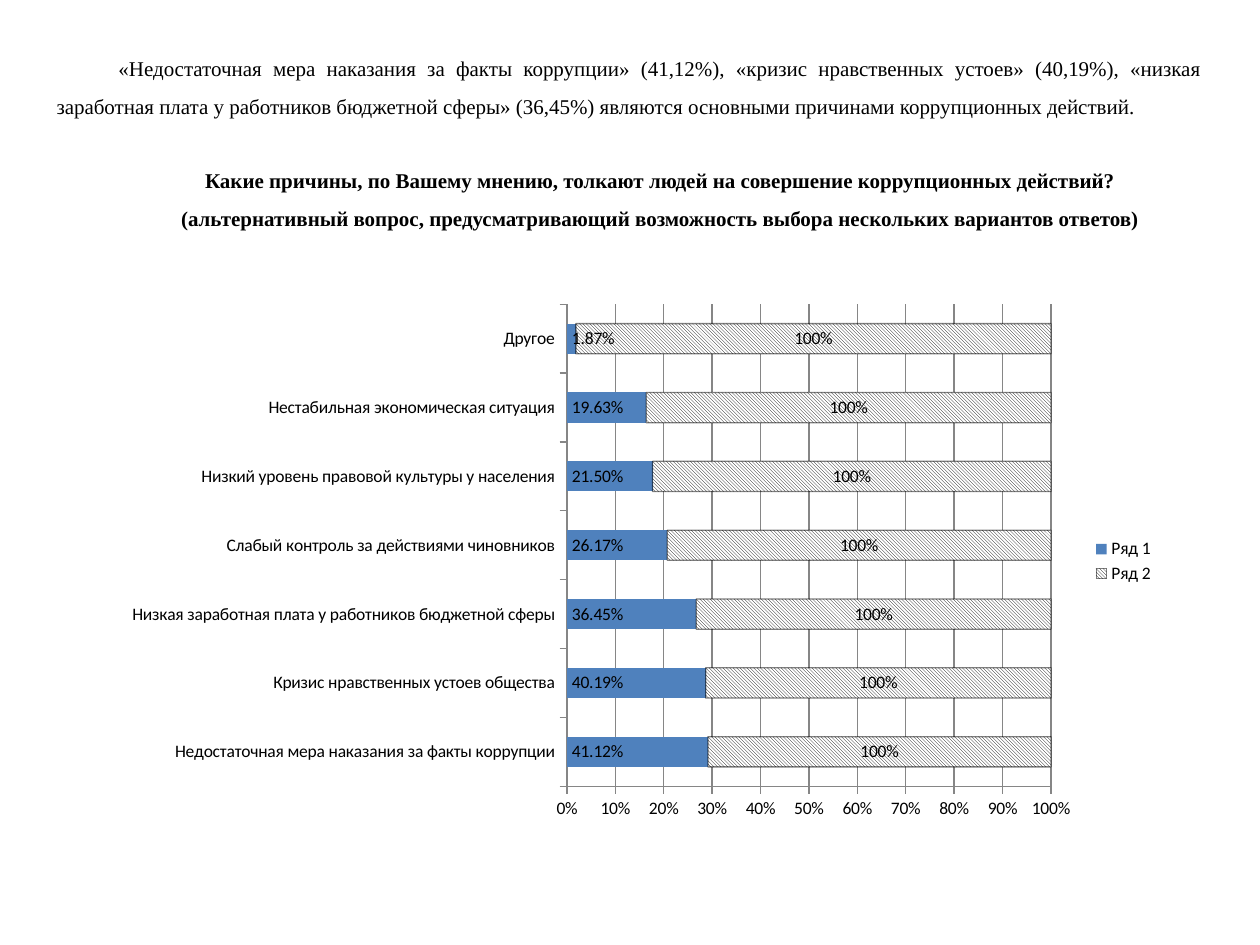
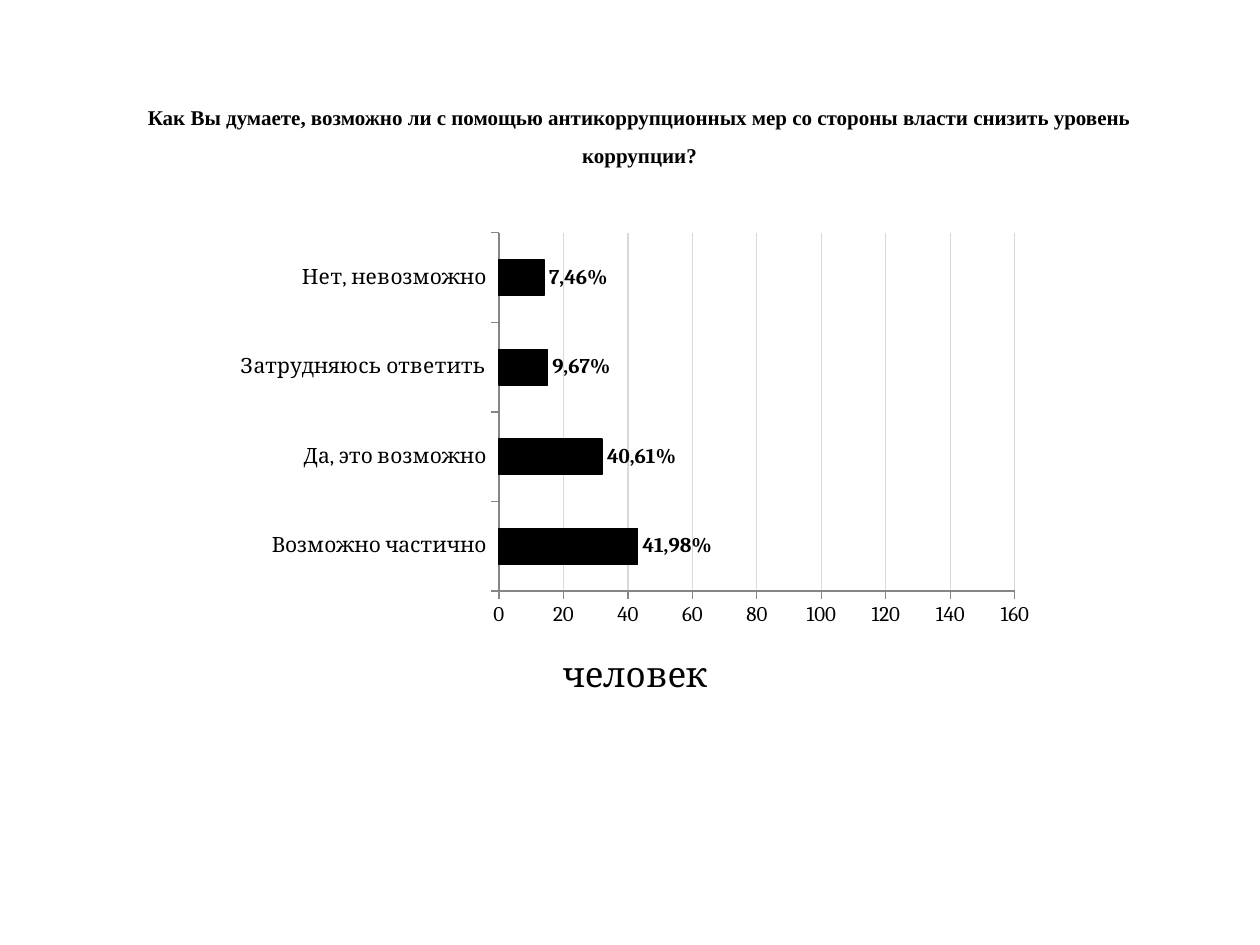
"""Build two survey slides, each with a heading and a bar chart."""
from lxml.etree import SubElement
from pptx import Presentation
from pptx.chart.data import CategoryChartData
from pptx.dml.color import RGBColor
from pptx.enum.chart import XL_CHART_TYPE as ChartType
from pptx.enum.chart import XL_LABEL_POSITION as LabelPlace
from pptx.enum.chart import XL_LEGEND_POSITION as LegendPlace
from pptx.enum.dml import MSO_PATTERN as Pattern
from pptx.enum.text import MSO_AUTO_SIZE as AutoSize
from pptx.enum.text import PP_ALIGN as Align
from pptx.oxml import parse_xml
from pptx.oxml.ns import nsdecls, qn
from pptx.util import Pt

COLORS = {"ink": "000000", "paper": "FFFFFF", "blue": "4F81BD",
          "axis": "868686", "grid": "D9D9D9"}
TEXT_FONT, CAUSES_FONT, OPINION_FONT = "Times New Roman", "Calibri", "Cambria"
TEXT_SIZE = 12
INDENT = 35.4

CAUSES_TEXT = [
    ("«Недостаточная мера наказания за факты коррупции» (41,12%), «кризис нравственных "
     "устоев» (40,19%), «низкая заработная плата у работников бюджетной сферы» (36,45%) "
     "являются основными причинами коррупционных действий.", Align.JUSTIFY, False, 0),
    ("Какие причины, по Вашему мнению, толкают людей на совершение коррупционных действий?",
     Align.CENTER, True, 21),
    ("(альтернативный вопрос, предусматривающий возможность выбора нескольких вариантов "
     "ответов)", Align.CENTER, True, 0),
]
CAUSES = [
    ("Недостаточная мера наказания за факты коррупции", 0.4112),
    ("Кризис нравственных устоев общества", 0.4019),
    ("Низкая заработная плата у работников бюджетной сферы", 0.3645),
    ("Слабый контроль за действиями чиновников", 0.2617),
    ("Низкий уровень правовой культуры у населения", 0.215),
    ("Нестабильная экономическая ситуация", 0.1963),
    ("Другое", 0.0187),
]
OPINION_TEXT = [
    ("Как Вы думаете, возможно ли с помощью антикоррупционных мер со стороны власти "
     "снизить уровень коррупции?", Align.CENTER, True, 0),
]
OPINIONS = [
    ("Возможно частично", 43, "41,98%"),
    ("Да, это возможно", 32, "40,61%"),
    ("Затрудняюсь ответить", 15, "9,67%"),
    ("Нет, невозможно", 14, "7,46%"),
]


def color(name):
    return RGBColor.from_string(COLORS[name])


def style_font(font, face, size, bold=False):
    font.name, font.size, font.bold = face, Pt(size), bold
    font.color.rgb = color("ink")


def style_line(line, name):
    line.color.rgb = color(name)
    line.width = Pt(0.75)


def add_text(page, place, paragraphs, indent=0):
    box = page.shapes.add_textbox(*map(Pt, place))
    frame = box.text_frame
    frame.word_wrap = True
    frame.auto_size = AutoSize.SHAPE_TO_FIT_TEXT
    for number, (text, align, bold, gap) in enumerate(paragraphs):
        para = frame.add_paragraph() if number else frame.paragraphs[0]
        para.text = text
        para.alignment, para.line_spacing = align, 1.5
        para.space_before = Pt(gap)
        para._p.get_or_add_pPr().set("indent", str(Pt(indent)))
        style_font(para.runs[0].font, TEXT_FONT, TEXT_SIZE, bold)


def set_layout(parent, inner=False, **parts):
    """Place a chart part by fractions of the chart's size."""
    layout = parent.find(qn("c:layout"))
    if layout is None:
        layout = parse_xml(f"<c:layout {nsdecls('c')}/>")
        parent.insert(0, layout)
    manual = SubElement(layout, qn("c:manualLayout"))
    if inner:
        SubElement(manual, qn("c:layoutTarget")).set("val", "inner")
    for mode in ("xMode", "yMode"):
        SubElement(manual, qn(f"c:{mode}")).set("val", "edge")
    for part, share in parts.items():
        SubElement(manual, qn(f"c:{part}")).set("val", str(share))


def add_bars(page, place, kind, categories, series, face, size, gap, grid, plot_area):
    data = CategoryChartData()
    data.categories = categories
    for name, values in series:
        data.add_series(name, values)
    chart = page.shapes.add_chart(kind, *map(Pt, place), data).chart
    chart.has_title = chart.has_legend = False
    style_font(chart.font, face, size)
    chart.plots[0].gap_width = gap
    chart.plots[0].vary_by_categories = False
    for axis in (chart.category_axis, chart.value_axis):
        style_line(axis.format.line, "axis")
        style_font(axis.tick_labels.font, face, size)
    chart.value_axis.has_major_gridlines = True
    style_line(chart.value_axis.major_gridlines.format.line, grid)
    set_layout(chart._chartSpace.chart.plotArea, inner=True, **plot_area)
    return chart


def show_values(series, number_format, face, size, bold=False, place=None):
    labels = series.data_labels
    labels.show_value = True
    labels.number_format = number_format
    labels.number_format_is_linked = False
    style_font(labels.font, face, size, bold)
    if place is not None:
        labels.position = place


def build_causes(page):
    add_text(page, (25.2, 20.9, 668.9, 116.6), CAUSES_TEXT, INDENT)
    names, shares = zip(*CAUSES)
    chart = add_bars(
        page, (65.5, 167.8, 601.2, 306), ChartType.BAR_STACKED_100, names,
        [("Ряд 1", shares), ("Ряд 2", [1] * len(names))], CAUSES_FONT, 10, 128, "axis",
        {"x": 0.43, "y": 0.02, "w": 0.46, "h": 0.9})
    chart.plots[0].overlap = 100
    ticks = chart.value_axis.tick_labels
    ticks.number_format, ticks.number_format_is_linked = "0%", False
    chart.has_legend = True
    chart.legend.position = LegendPlace.RIGHT
    chart.legend.include_in_layout = False
    style_font(chart.legend.font, CAUSES_FONT, 10)

    answers, rest = chart.plots[0].series
    answers.format.fill.solid()
    answers.format.fill.fore_color.rgb = color("blue")
    show_values(answers, "0.00%", CAUSES_FONT, 10, place=LabelPlace.INSIDE_BASE)
    fill = rest.format.fill
    fill.patterned()
    fill.pattern = Pattern.LIGHT_DOWNWARD_DIAGONAL
    fill.fore_color.rgb, fill.back_color.rgb = color("ink"), color("paper")
    style_line(rest.format.line, "ink")
    outline = rest._element.spPr.find(qn("a:ln"))
    SubElement(outline.find(".//" + qn("a:srgbClr")), qn("a:alpha")).set("val", "49000")
    show_values(rest, "0%", CAUSES_FONT, 10)


def build_opinions(page):
    add_text(page, (70.6, 49, 589.7, 51.1), OPINION_TEXT)
    names, counts, captions = zip(*OPINIONS)
    chart = add_bars(
        page, (126, 127.4, 468, 284.4), ChartType.BAR_CLUSTERED, names,
        [("Series 1", counts)], OPINION_FONT, 12, 150, "grid",
        {"x": 0.34, "y": 0.02, "w": 0.63, "h": 0.72})
    axis = chart.value_axis
    axis.minimum_scale, axis.maximum_scale, axis.major_unit = 0, 160, 20
    title = axis.axis_title
    title.text_frame.text = "человек"
    style_font(title.text_frame.paragraphs[0].runs[0].font, OPINION_FONT, 20)
    set_layout(title._element, x=0.41, y=0.85)

    people = chart.plots[0].series[0]
    people.format.fill.solid()
    people.format.fill.fore_color.rgb = color("ink")
    style_line(people.format.line, "ink")
    show_values(people, "General", OPINION_FONT, 12, True, LabelPlace.OUTSIDE_END)
    for number, caption in enumerate(captions):
        label = people.points[number].data_label
        label.text_frame.text = caption
        style_font(label.text_frame.paragraphs[0].runs[0].font, OPINION_FONT, 12, True)
        label.position = LabelPlace.OUTSIDE_END


def main():
    deck = Presentation()
    deck.slide_width, deck.slide_height = Pt(720), Pt(540)
    for build in (build_causes, build_opinions):
        build(deck.slides.add_slide(deck.slide_layouts[6]))
    deck.save("out.pptx")


if __name__ == "__main__":
    main()
